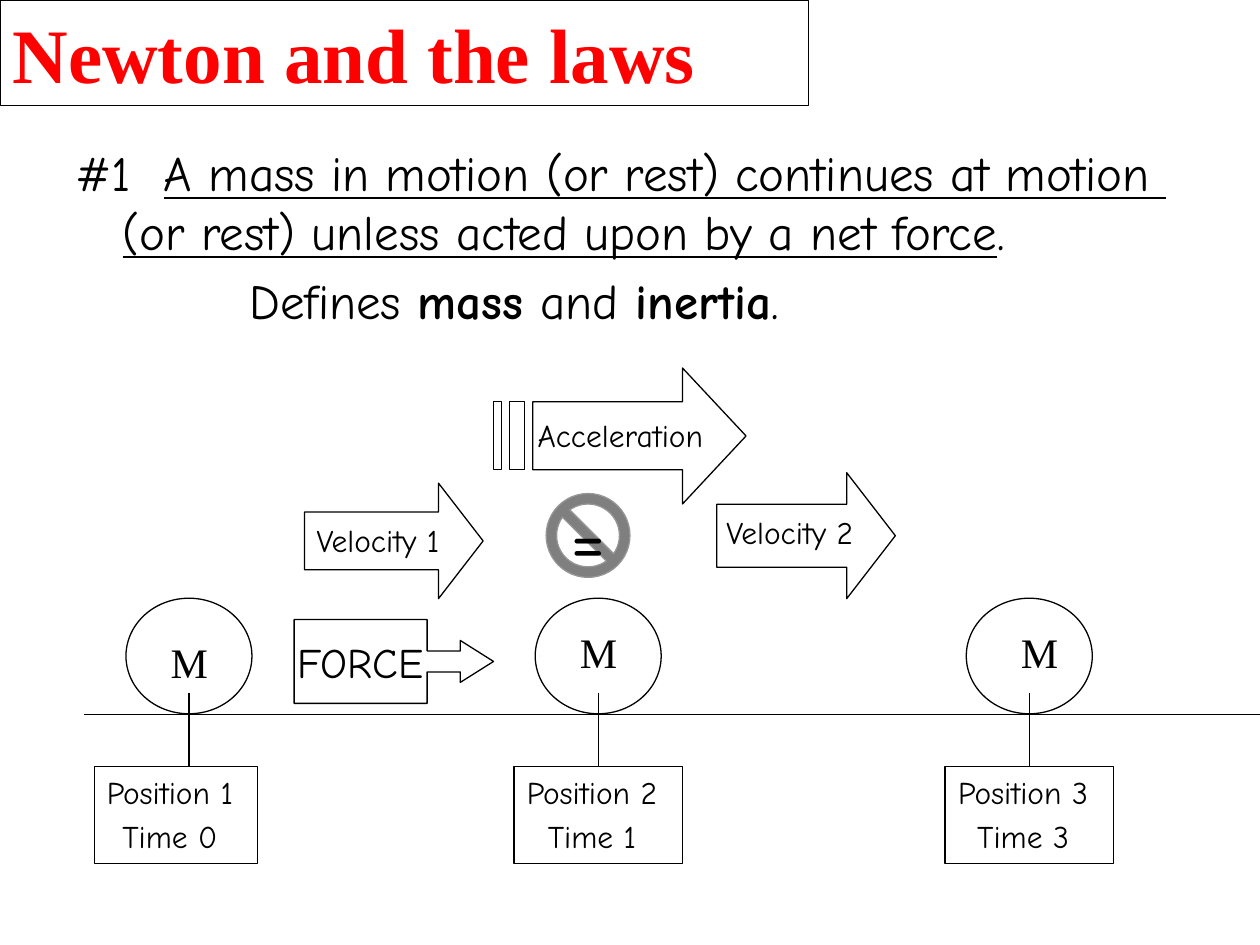
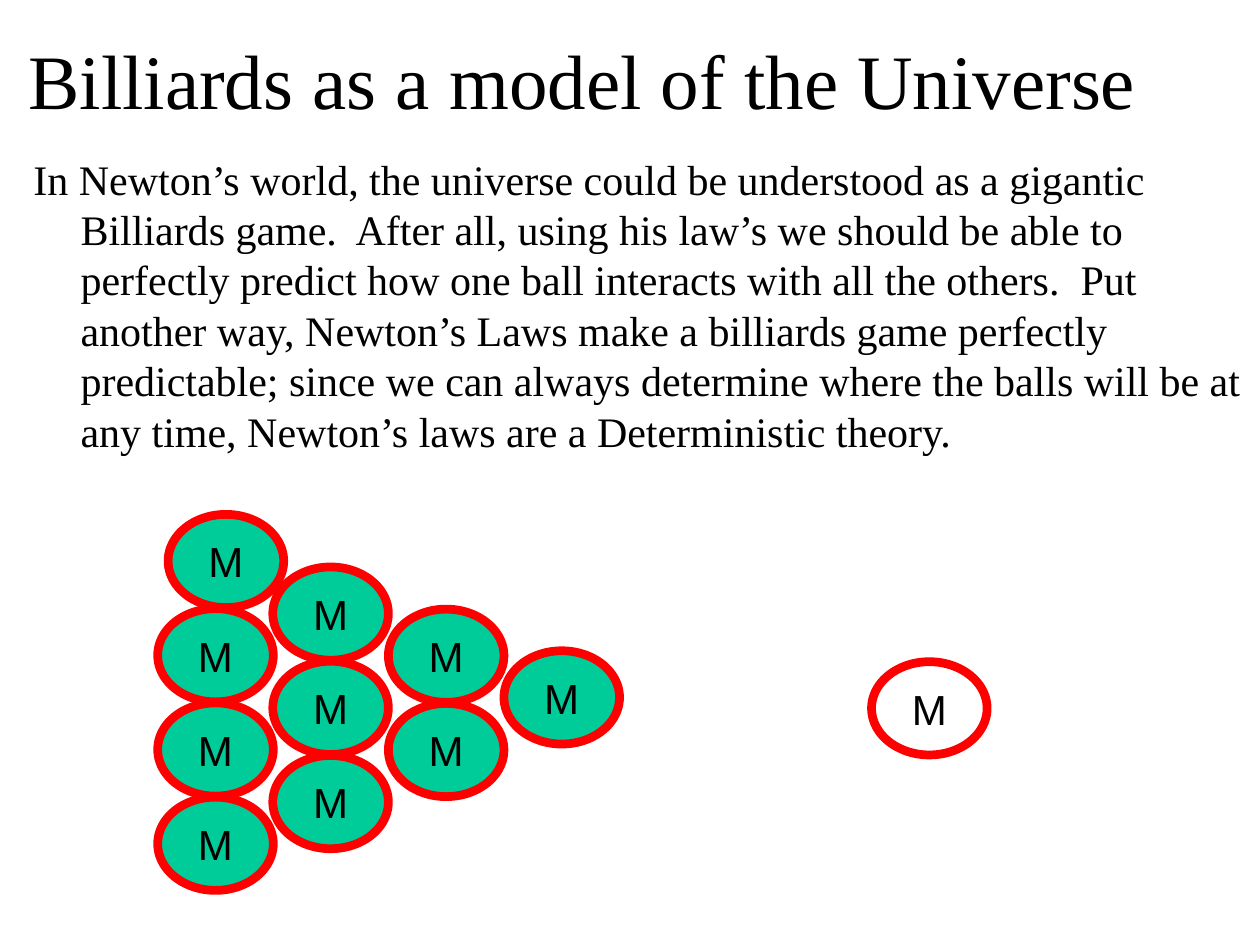
from dataclasses import dataclass

from lxml import etree
from pptx import Presentation
from pptx.dml.color import RGBColor
from pptx.enum import shapes as kinds, text as modes
from pptx.oxml.ns import qn
from pptx.util import Cm, Pt

BLACK = RGBColor(0x00, 0x00, 0x00)
WHITE = RGBColor(0xFF, 0xFF, 0xFF)
RED = RGBColor(0xFF, 0x00, 0x00)
GREEN = RGBColor(0x00, 0xCC, 0x99)
GREY = RGBColor(0x96, 0x96, 0x96)

SERIF, COMIC, SANS = "Times New Roman", "Comic Neue", "Arial"
OVAL = kinds.MSO_SHAPE.OVAL
ARROW = kinds.MSO_SHAPE.RIGHT_ARROW
HANG = 0.95
GROUND = 14.4


@dataclass(frozen=True)
class Box:
    """A place on the slide, in centimetres."""
    left: float
    top: float
    width: float
    height: float

    def emu(self) -> tuple:
        return Cm(self.left), Cm(self.top), Cm(self.width), Cm(self.height)


@dataclass(frozen=True)
class Mass:
    axis: float
    letter: Box
    label: str
    sign: Box


@dataclass(frozen=True)
class Speed:
    label: str
    arrow: Box
    words: Box


@dataclass(frozen=True)
class Column:
    left: float
    top: float
    count: int


MASSES = [
    Mass(3.81, Box(3.18, 12.7, 1.27, 1.27), "Position 1\nTime 0", Box(1.9, 15.45, 3.3, 1.96)),
    Mass(12.06, Box(11.43, 12.5, 1.27, 1.27), "Position 2\nTime 1", Box(10.36, 15.45, 3.4, 1.96)),
    Mass(20.75, Box(20.32, 12.5, 1.27, 1.27), "Position 3\nTime 3", Box(19.05, 15.45, 3.4, 1.96)),
]
SPEEDS = [
    Speed("Velocity 1", Box(6.14, 9.74, 3.6, 2.33), Box(5.92, 10.37, 3.4, 1.02)),
    Speed("Velocity 2", Box(14.45, 9.53, 3.6, 2.54), Box(14.17, 10.22, 3.5, 1.02)),
]
RACK = [Column(3.18, 10.37, 4), Column(5.5, 11.43, 3),
        Column(7.83, 12.28, 2), Column(10.16, 13.12, 1)]
BALL_W, BALL_H, PITCH, NUDGE = 2.33, 1.88, 1.9, 0.21

THEORY = (
    "In Newton’s world, the universe could be understood as a gigantic "
    "Billiards game.  After all, using his law’s we should be able to "
    "perfectly predict how one ball interacts with all the others.  Put "
    "another way, Newton’s Laws make a billiards game perfectly predictable; "
    "since we can always determine where the balls will be at any time, "
    "Newton’s laws are a Deterministic theory."
)


def style(font, name: str, size: float, color: RGBColor = BLACK) -> None:
    font.name, font.size = name, Pt(size)
    font.color.rgb = color


def write(shape, words: str, name: str, size: float) -> None:
    """Fill a shape with centred lines."""
    shape.text_frame.text = words
    for par in shape.text_frame.paragraphs:
        par.alignment = modes.PP_ALIGN.CENTER
        par.space_before = Pt(size * 0.2)
        for run in par.runs:
            style(run.font, name, size)


def label(slide, box: Box, words: str, name: str, size: float, wrap: bool = False):
    shape = slide.shapes.add_textbox(*box.emu())
    write(shape, words, name, size)
    shape.text_frame.word_wrap = wrap
    shape.text_frame.auto_size = modes.MSO_AUTO_SIZE.SHAPE_TO_FIT_TEXT
    return shape


def outline(shape, color: RGBColor = BLACK, width: float = 0.75) -> None:
    shape.line.color.rgb = color
    shape.line.width = Pt(width)


def clear(shape) -> None:
    """Leave only a thin black outline."""
    shape.shadow.inherit = False
    shape.fill.background()
    outline(shape)


def draw(slide, kind, box: Box, *adjust: float):
    shape = slide.shapes.add_shape(kind, *box.emu())
    clear(shape)
    for i, value in enumerate(adjust):
        shape.adjustments[i] = value
    return shape


def rule(slide, x1: float, y1: float, x2: float, y2: float):
    line = slide.shapes.add_connector(
        kinds.MSO_CONNECTOR.STRAIGHT, Cm(x1), Cm(y1), Cm(x2), Cm(y2))
    outline(line)
    etree.SubElement(line._element.spPr, qn("a:effectLst"))
    return line


def place(shape, box: Box) -> None:
    shape.left, shape.top, shape.width, shape.height = box.emu()
    shape.text_frame.auto_size = modes.MSO_AUTO_SIZE.NONE


def head(slide, words: str, box: Box, color: RGBColor, align):
    title = slide.shapes.title
    place(title, box)
    title.text_frame.text = words
    title.text_frame.vertical_anchor = modes.MSO_ANCHOR.MIDDLE
    par = title.text_frame.paragraphs[0]
    par.alignment = align
    style(par.runs[0].font, SERIF, 44, color)
    return title


def indent(par, margin: float, first: float) -> None:
    """Indent a paragraph and drop its bullet."""
    props = par._p.get_or_add_pPr()
    props.set("marL", str(Cm(margin)))
    props.set("indent", str(Cm(first)))
    etree.SubElement(props, qn("a:buNone"))


def add_run(par, words: str, bold: bool = False, under: bool = False) -> None:
    run = par.add_run()
    run.text = words
    style(run.font, COMIC, 28)
    run.font.bold, run.font.underline = bold, under


def add_law(slide) -> None:
    body = slide.placeholders[1]
    place(body, Box(1.27, 2.75, 24.97, 4.02))
    law = body.text_frame.paragraphs[0]
    indent(law, HANG, -HANG)
    add_run(law, "#1  ")
    add_run(law, "A mass in motion (or rest) continues at motion ", under=True)
    law.add_line_break()
    add_run(law, "(or rest) unless acted upon by a net force", under=True)
    add_run(law, ".")

    terms = body.text_frame.add_paragraph()
    indent(terms, 3.5, 0)
    for words, bold in [("Defines ", False), ("mass ", True), ("and", False),
                        (" inertia", True), (".", False)]:
        add_run(terms, words, bold=bold)


def add_mass(slide, mass: Mass) -> None:
    draw(slide, OVAL, Box(mass.axis - 1.27, 12.06, 2.54, 2.33))
    label(slide, mass.letter, "M", SERIF, 24)
    sign = label(slide, mass.sign, mass.label, COMIC, 18)
    sign.text_frame.margin_right = Cm(0.5)
    outline(sign)
    stem = rule(slide, mass.axis, mass.sign.top, mass.axis, 13.97)
    if abs(mass.sign.left + mass.sign.width / 2 - mass.axis) < 0.01:
        stem.begin_connect(sign, 0)


def add_push(slide) -> None:
    """Draw the striped acceleration arrow."""
    top, bottom, neck = 8.1, 9.47, 13.76
    loops = [[(neck, 7.42), (neck, top), (10.74, top), (10.74, bottom),
              (neck, bottom), (neck, 10.16), (15.04, 8.79)]]
    for left, right in [(10.27, 10.58), (9.95, 10.11)]:
        loops.append([(left, top), (left, bottom), (right, bottom), (right, top)])
    pen = None
    for loop in loops:
        start, *rest = [(Cm(x), Cm(y)) for x, y in loop]
        if pen is None:
            pen = slide.shapes.build_freeform(*start)
        else:
            pen.move_to(*start)
        pen.add_line_segments(rest)
    clear(pen.convert_to_shape())
    label(slide, Box(10.37, 8.26, 4.27, 1.02), "Acceleration", COMIC, 18)


def add_ban(slide) -> None:
    """Draw the crossed-out equals sign."""
    ban = draw(slide, kinds.MSO_SHAPE.NO_SYMBOL, Box(11.01, 9.95, 1.69, 1.69), 0.125)
    ban.fill.solid()
    ban.fill.fore_color.rgb = BLACK
    color = ban._element.spPr.find(qn("a:solidFill"))[0]
    etree.SubElement(color, qn("a:alpha"), val="50000")
    outline(ban, GREY)
    label(slide, Box(11.22, 9.74, 1.3, 2.11), "=", COMIC, 44, wrap=True)


def add_ball(slide, left: float, top: float, fill: RGBColor) -> None:
    ball = draw(slide, OVAL, Box(left, top, BALL_W, BALL_H))
    ball.fill.solid()
    ball.fill.fore_color.rgb = fill
    outline(ball, RED, 5)
    write(ball, "M", SANS, 24)
    ball.text_frame.vertical_anchor = modes.MSO_ANCHOR.MIDDLE


def build_laws(slide) -> None:
    title = head(slide, "Newton and the laws", Box(0, 0, 16.3, 2.12),
                 RED, modes.PP_ALIGN.LEFT)
    title.text_frame.paragraphs[0].runs[0].font.bold = True
    outline(title, BLACK, 0.5)
    add_law(slide)
    rule(slide, 1.69, GROUND, 25.4, GROUND)
    for mass in MASSES:
        add_mass(slide, mass)
    for speed in SPEEDS:
        draw(slide, ARROW, speed.arrow, 0.5, 0.386)
        label(slide, speed.words, speed.label, COMIC, 18)
    force = draw(slide, kinds.MSO_SHAPE.RIGHT_ARROW_CALLOUT,
                 Box(5.93, 12.49, 4.02, 1.69), 0.25, 0.25, 0.396, 0.667)
    write(force, "FORCE", COMIC, 24)
    force.text_frame.word_wrap = False
    force.text_frame.vertical_anchor = modes.MSO_ANCHOR.MIDDLE
    add_push(slide)
    add_ban(slide)


def build_game(slide) -> None:
    head(slide, "Billiards as a model of the Universe", Box(0, 0, 23.5, 3.18),
         BLACK, modes.PP_ALIGN.CENTER)
    body = slide.placeholders[1]
    place(body, Box(0.42, 2.96, 24.98, 6.99))
    body.text_frame.text = THEORY
    par = body.text_frame.paragraphs[0]
    indent(par, HANG, -HANG)
    style(par.runs[0].font, SERIF, 24)
    for column in RACK:
        for row in range(column.count):
            shift = NUDGE if column is RACK[0] and row == 0 else 0
            add_ball(slide, column.left + shift, column.top + row * PITCH, GREEN)
    add_ball(slide, 17.57, 13.34, WHITE)


def main() -> None:
    deck = Presentation()
    deck.slide_width, deck.slide_height = Cm(25.4), Cm(19.05)
    for build in (build_laws, build_game):
        build(deck.slides.add_slide(deck.slide_layouts[1]))
    deck.save("out.pptx")


if __name__ == "__main__":
    main()
